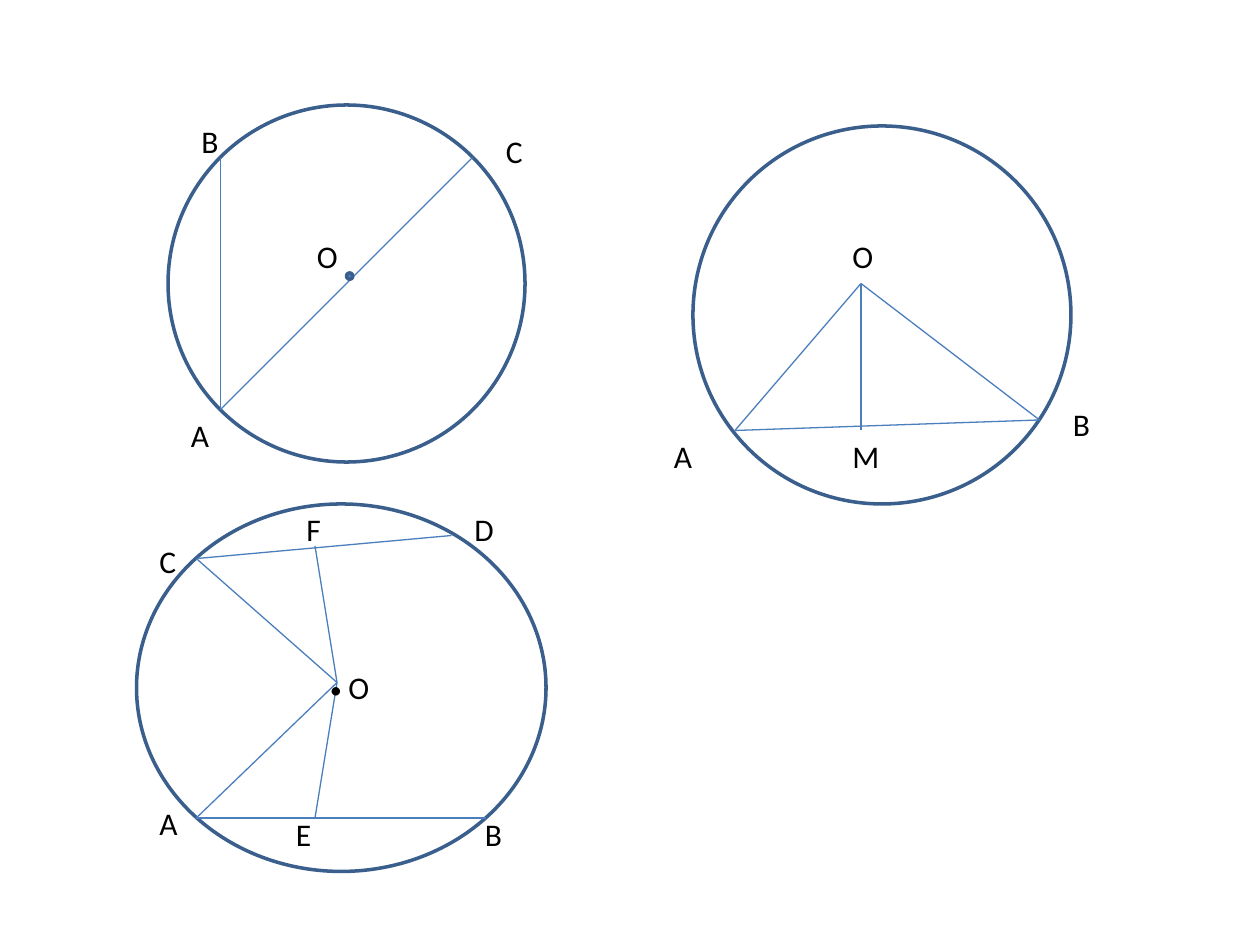
from lxml import etree
from pptx import Presentation
from pptx.dml.color import RGBColor
from pptx.enum.shapes import MSO_CONNECTOR, MSO_SHAPE
from pptx.enum.text import MSO_AUTO_SIZE
from pptx.oxml.ns import qn
from pptx.util import Emu, Pt

PX = 7620  # 120 px to the inch
ELLIPSE = MSO_SHAPE.OVAL
STRAIGHT = MSO_CONNECTOR.STRAIGHT
GROW = MSO_AUTO_SIZE.SHAPE_TO_FIT_TEXT

OUTLINE, CHORD, CENTRE, INK = "3A5F8C", "4B7EBC", "4F81BD", "000000"
LABEL_HEIGHT = 48

# Boxes are left, top, width, height; all else is relative to the box.
# Labels are text, left, top, width.
DIAMETER_FIGURE = {
    "box": (160, 100, 340, 340),
    "points": {"A": (50, 290), "B": (50, 50), "C": (290, 50)},
    "segments": ["BA", "AC"],
    "labels": [("O", 130, 120, 44), ("A", 10, 290, 60),
               ("B", 20, 10, 70), ("C", 310, 20, 70)],
}
CHORD_FIGURE = {
    "box": (660, 120, 360, 360),
    "points": {"A": (40, 290), "B": (330, 280), "O": (160, 150), "M": (160, 290)},
    "segments": ["AB", "AO", "BO", "OM"],
    "labels": [("A", -30, 290, 90), ("B", 350, 260, 70),
               ("O", 140, 100, 60), ("M", 140, 290, 100)],
}
TWO_CHORDS_FIGURE = {
    "box": (130, 480, 390, 350),
    "points": {"A": (57, 299), "B": (333, 299), "C": (57, 52), "D": (300, 30),
               "E": (170, 299), "F": (170, 40), "O": (191, 170)},
    "segments": ["CD", "AB", "CO", "OA", "FO", "OE"],
    "labels": [("O", 190, 150, 40), ("D", 310, 0, 100), ("C", 10, 30, 70),
               ("A", 10, 280, 70), ("B", 320, 290, 80),
               ("F", 150, 0, 60), ("E", 140, 290, 90)],
}


def px(*lengths):
    return [Emu(length * PX) for length in lengths]


def colour(hex_value):
    return RGBColor.from_string(hex_value)


def add_ellipse(slide, box, fill=None):
    ellipse = slide.shapes.add_shape(ELLIPSE, *px(*box))
    ellipse.shadow.inherit = False
    if fill:
        ellipse.fill.solid()
        ellipse.fill.fore_color.rgb = colour(fill)
    else:
        ellipse.fill.background()
    ellipse.line.color.rgb = colour(OUTLINE)
    ellipse.line.width = Pt(2)


def add_segment(slide, start, end):
    segment = slide.shapes.add_connector(STRAIGHT, *px(*start, *end))
    segment.line.color.rgb = colour(CHORD)
    segment.line.width = Pt(0.75)
    etree.SubElement(segment._element.spPr, qn("a:effectLst"))


def add_label(slide, text, box, size=18):
    frame = slide.shapes.add_textbox(*px(*box)).text_frame
    frame.word_wrap = True
    frame.auto_size = GROW
    frame.text = text
    font = frame.paragraphs[0].runs[0].font
    for name, value in {"name": "Calibri", "size": Pt(size)}.items():
        setattr(font, name, value)
    font.color.rgb = colour(INK)


def draw_figure(slide, box, points, segments, labels):
    """Draw a circle with its segments and point names inside the box."""
    left, top = box[:2]
    add_ellipse(slide, box)
    for start, end in segments:
        add_segment(slide, *[(left + points[name][0], top + points[name][1])
                             for name in (start, end)])
    for text, x, y, width in labels:
        add_label(slide, text, (left + x, top + y, width, LABEL_HEIGHT))


def main():
    prs = Presentation()
    prs.slide_width, prs.slide_height = px(1200, 900)
    slide = prs.slides.add_slide(prs.slide_layouts[6])

    # Circles with their chords
    for figure in (DIAMETER_FIGURE, CHORD_FIGURE, TWO_CHORDS_FIGURE):
        draw_figure(slide, **figure)

    # Centre marks: a dot in the first circle, a typed point in the third
    left, top = DIAMETER_FIGURE["box"][:2]
    add_ellipse(slide, (left + 170, top + 160, 6, 6), fill=CENTRE)
    left, top = TWO_CHORDS_FIGURE["box"][:2]
    add_label(slide, ".", (left + 170, top + 110, 110, 92), size=40)

    prs.save("out.pptx")


if __name__ == "__main__":
    main()
